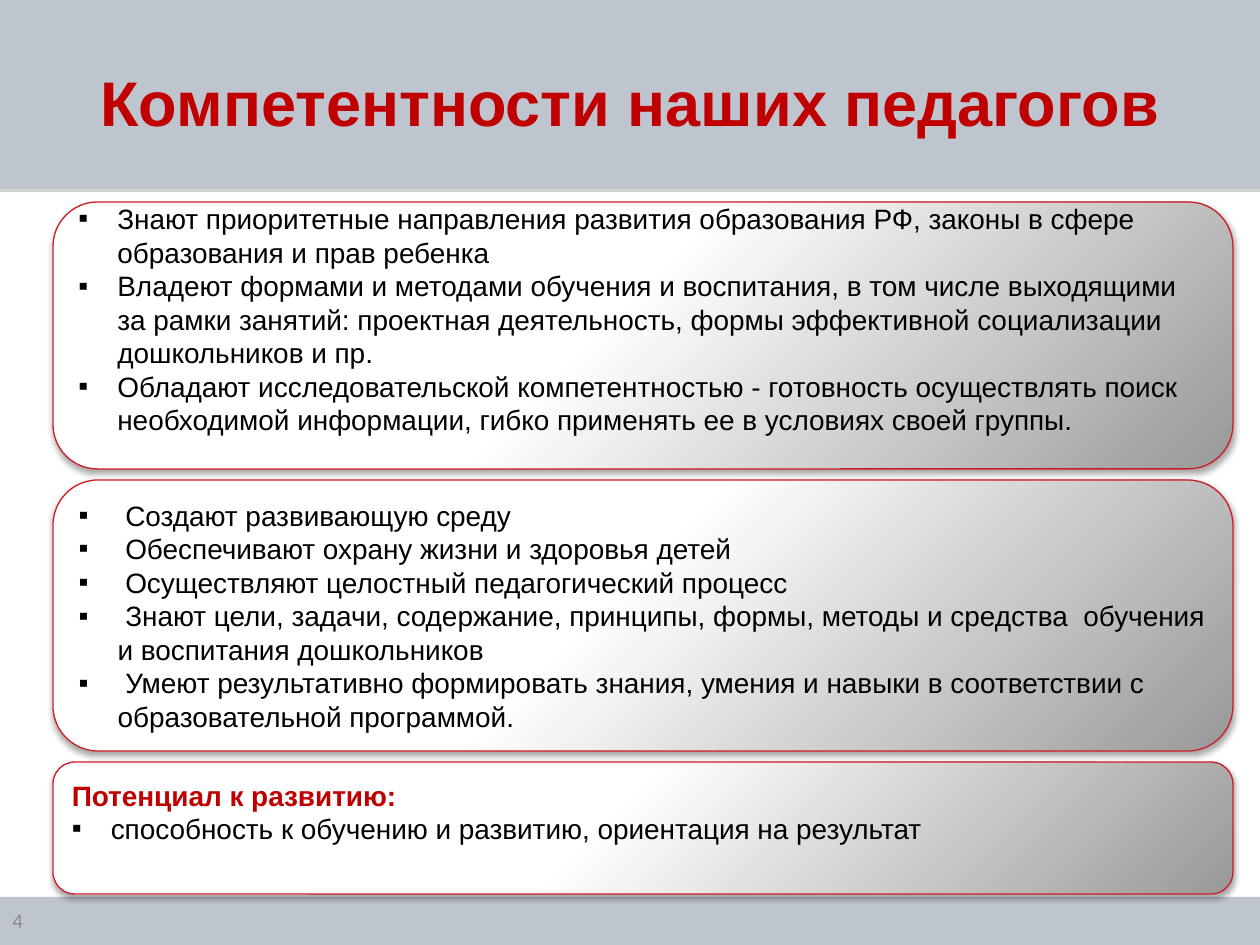
"""Build the slide on the competencies of teachers."""
import dataclasses
import typing

import lxml.etree
import pptx
import pptx.dml.color
import pptx.enum.shapes
import pptx.enum.text
import pptx.oxml
import pptx.oxml.ns
import pptx.util

PIXEL = 914400 / 126
COLORS = {
    "band": "BFC5CE", "band_shadow": "808080", "accent": "C00000", "text": "000000",
    "number": "8C8C8C", "outline": "CD1B27", "shadow": "000000",
    "light": "FFFFFF", "dark": "999999",
}
NAMESPACE = pptx.oxml.ns.nsdecls("a")
SHAPES = pptx.enum.shapes.MSO_SHAPE
ANCHOR = pptx.enum.text.MSO_ANCHOR
ALIGN = pptx.enum.text.PP_ALIGN
TITLE_FORMAT = {"name": "Arial", "size": pptx.util.Pt(36), "bold": True}
TEXT_FORMAT = {"name": "Arial", "size": pptx.util.Pt(16), "bold": False}
HEADING_FORMAT = {**TEXT_FORMAT, "bold": True}
NUMBER_FORMAT = {"name": "Calibri", "size": pptx.util.Pt(12), "bold": False}


@dataclasses.dataclass(frozen=True)
class Box:
    left: int
    top: int
    width: int
    height: int

    def lengths(self) -> list[int]:
        return [px(value) for value in dataclasses.astuple(self)]


@dataclasses.dataclass(frozen=True)
class Panel:
    box: Box
    items: tuple[str, ...]
    heading: str = ""
    bottom_inset: int = 6


BANDS = (Box(0, 0, 1260, 189), Box(0, 897, 1260, 48))
PANELS = (
    Panel(Box(53, 202, 1180, 267), (
        "Знают приоритетные направления развития образования РФ, законы в сфере "
        "образования и прав ребенка",
        "Владеют формами и методами обучения и воспитания, в том числе выходящими "
        "за рамки занятий: проектная деятельность, формы эффективной социализации "
        "дошкольников и пр.",
        "Обладают исследовательской компетентностью - готовность осуществлять поиск "
        "необходимой информации, гибко применять ее в условиях своей группы.",
    ), bottom_inset=39),
    Panel(Box(53, 480, 1180, 271), (
        " Создают развивающую среду",
        " Обеспечивают охрану жизни и здоровья детей",
        " Осуществляют целостный педагогический процесс",
        " Знают цели, задачи, содержание, принципы, формы, методы и средства  обучения "
        "и воспитания дошкольников",
        " Умеют результативно формировать знания, умения и навыки в соответствии с "
        "образовательной программой.",
    )),
    Panel(Box(53, 762, 1180, 132),
          ("способность к обучению и развитию, ориентация на результат",),
          heading="Потенциал к развитию:", bottom_inset=39),
)


def px(value: int) -> int:
    return round(value * PIXEL)


def rgb(color: str) -> pptx.dml.color.RGBColor:
    return pptx.dml.color.RGBColor.from_string(COLORS[color])


def write(paragraph, text: str, format_values: dict[str, typing.Any], color: str,
          alignment=ALIGN.LEFT) -> None:
    paragraph.alignment = alignment
    run = paragraph.add_run()
    run.text = text
    for name, value in format_values.items():
        setattr(run.font, name, value)
    run.font.color.rgb = rgb(color)


def add_bullet(paragraph) -> None:
    properties = paragraph._p.get_or_add_pPr()
    properties.set("marL", str(px(39)))
    properties.set("indent", str(-px(39)))
    lxml.etree.SubElement(properties, pptx.oxml.ns.qn("a:buFont"), typeface="Arial")
    lxml.etree.SubElement(properties, pptx.oxml.ns.qn("a:buChar"), char="▪")


def add_shadow(shape, color: str, blur: float) -> None:
    shape.shadow.inherit = False
    effects = shape.element.spPr.find(pptx.oxml.ns.qn("a:effectLst"))
    effects.append(pptx.oxml.parse_xml(
        f'<a:outerShdw {NAMESPACE} blurRad="{pptx.util.Pt(blur)}" '
        f'dist="{pptx.util.Pt(1.8)}" dir="5400000" rotWithShape="0">'
        f'<a:srgbClr val="{COLORS[color]}"><a:alpha val="35000"/></a:srgbClr>'
        '</a:outerShdw>'))


def set_gradient(shape) -> None:
    stops = "".join(
        f'<a:gs pos="{percent * 1000}"><a:srgbClr val="{COLORS[color]}"/></a:gs>'
        for percent, color in ((0, "light"), (46, "light"), (100, "dark")))
    shape.fill.background()
    properties = shape.element.spPr
    properties.replace(
        properties.find(pptx.oxml.ns.qn("a:noFill")),
        pptx.oxml.parse_xml(
            f'<a:gradFill {NAMESPACE} rotWithShape="1"><a:gsLst>{stops}</a:gsLst>'
            '<a:path path="circle"><a:fillToRect r="100000" b="100000"/></a:path>'
            '</a:gradFill>'))


def add_band(slide, box: Box) -> None:
    shape = slide.shapes.add_shape(SHAPES.RECTANGLE, *box.lengths())
    shape.fill.solid()
    shape.fill.fore_color.rgb = rgb("band")
    shape.line.fill.background()
    add_shadow(shape, "band_shadow", 0)


def add_title(slide, text: str, box: Box) -> None:
    title = slide.shapes.title
    for name, value in zip(("left", "top", "width", "height"), box.lengths()):
        setattr(title, name, value)
    title.text_frame.vertical_anchor = ANCHOR.MIDDLE
    title.text_frame.auto_size = pptx.enum.text.MSO_AUTO_SIZE.SHAPE_TO_FIT_TEXT
    write(title.text_frame.paragraphs[0], text, TITLE_FORMAT, "accent", ALIGN.CENTER)
    title.element.getparent().append(title.element)


def add_number(slide, text: str, box: Box) -> None:
    frame = slide.shapes.add_textbox(*box.lengths()).text_frame
    frame.word_wrap = True
    frame.vertical_anchor = ANCHOR.MIDDLE
    write(frame.paragraphs[0], text, NUMBER_FORMAT, "number")


def add_panel(slide, panel: Panel) -> None:
    shape = slide.shapes.add_shape(SHAPES.ROUNDED_RECTANGLE, *panel.box.lengths())
    set_gradient(shape)
    shape.line.color.rgb = rgb("outline")
    shape.line.width = pptx.util.Pt(0.75)
    add_shadow(shape, "shadow", 3.1)
    frame = shape.text_frame
    frame.word_wrap = True
    frame.vertical_anchor = ANCHOR.MIDDLE
    frame.margin_bottom = px(panel.bottom_inset)
    paragraph = frame.paragraphs[0]
    if panel.heading:
        write(paragraph, panel.heading, HEADING_FORMAT, "accent")
    for index, item in enumerate(panel.items):
        if index or panel.heading:
            paragraph = frame.add_paragraph()
        add_bullet(paragraph)
        write(paragraph, item, TEXT_FORMAT, "text")


def main() -> None:
    presentation = pptx.Presentation()
    presentation.slide_width = px(1260)
    presentation.slide_height = px(945)
    slide = presentation.slides.add_slide(presentation.slide_layouts[5])
    for band in BANDS:
        add_band(slide, band)
    add_title(slide, "Компетентности наших педагогов", Box(0, 57, 1260, 89))
    add_number(slide, "4", Box(0, 895, 98, 50))
    for panel in PANELS:
        add_panel(slide, panel)
    presentation.save("out.pptx")


if __name__ == "__main__":
    main()
